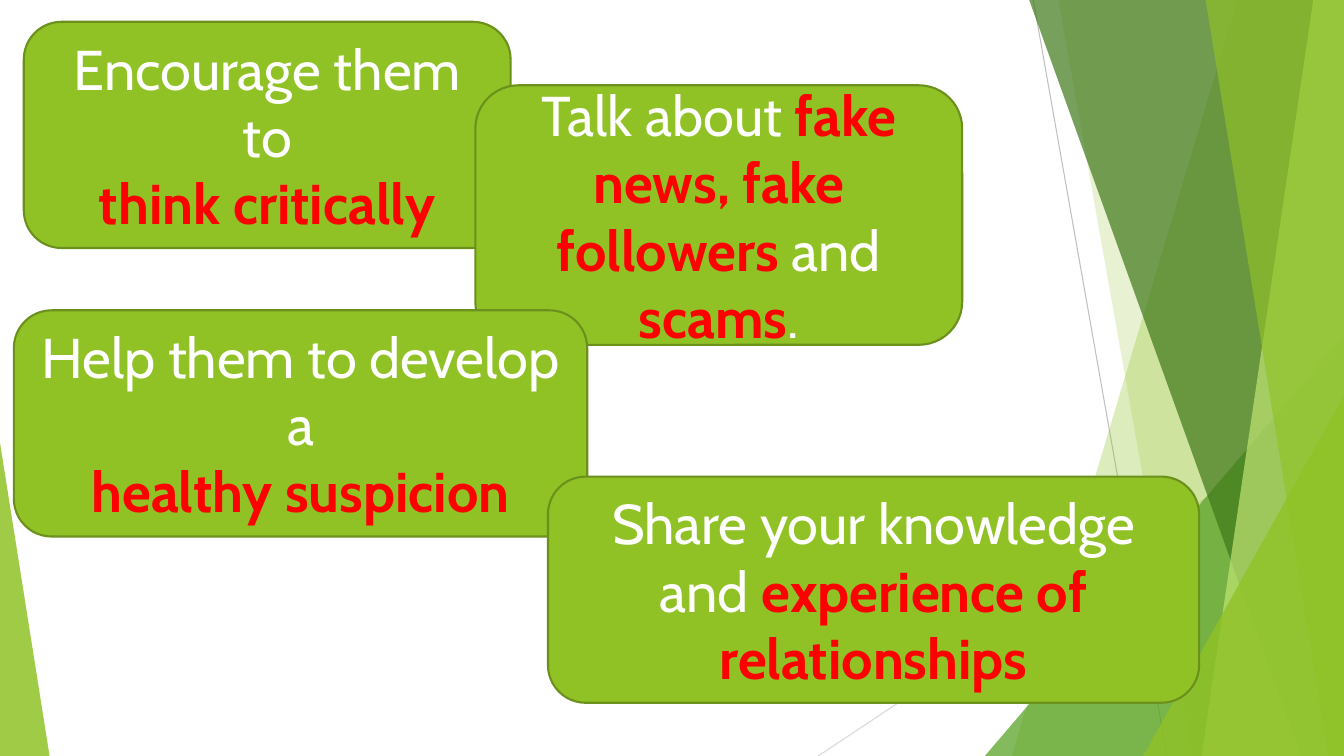
from dataclasses import dataclass

from lxml import etree
from pptx import Presentation
from pptx import util as u
from pptx.dml.color import RGBColor
from pptx.enum import shapes, text
from pptx.oxml.ns import qn

WIDTH, HEIGHT = 33.87, 19.05


@dataclass(frozen=True)
class Theme:
    green: str = "90C226"
    leaf: str = "54A021"
    forest: str = "3F7819"
    lime: str = "C0E474"
    outline: str = "6B901C"
    grey: str = "BFBFBF"
    pale_grey: str = "D9D9D9"
    white: str = "FFFFFF"
    accent: str = "FF0000"
    font: str = "Cabin"
    size: int = 40


class Deck:
    """Draws on one slide; all lengths are in centimetres."""

    def __init__(self, slide, theme):
        self.s = slide
        self.theme = theme

    def line(self, x1, y1, x2, y2, color):
        ends = [u.Cm(v) for v in (x1, y1, x2, y2)]
        cn = self.s.shapes.add_connector(shapes.MSO_CONNECTOR.STRAIGHT, *ends)
        cn.line.color.rgb = RGBColor.from_string(color)
        cn.line.width = u.Pt(0.75)
        etree.SubElement(cn._element.spPr, qn("a:effectLst"))

    def fill(self, sp, color, opacity=100):
        sp.shadow.inherit = False
        sp.fill.solid()
        sp.fill.fore_color.rgb = RGBColor.from_string(color)
        if opacity < 100:
            clr = sp._element.spPr.find(".//" + qn("a:srgbClr"))
            etree.SubElement(clr, qn("a:alpha"), val=str(opacity * 1000))
        sp.line.fill.background()

    def band(self, top_x, bottom_x, color, opacity):
        """Full-height strip from a slanted left edge to the slide's right edge."""
        top = u.Cm(-0.02)
        right, bottom = u.Cm(WIDTH), u.Cm(HEIGHT)
        outline = self.s.shapes.build_freeform(u.Cm(top_x), top)
        outline.add_line_segments(
            [(right, top), (right, bottom), (u.Cm(bottom_x), bottom)], close=True)
        self.fill(outline.convert_to_shape(), color, opacity)

    def corner(self, left, width, height, apex, color, opacity):
        """Triangle standing on the bottom edge of the slide."""
        sp = self.s.shapes.add_shape(
            shapes.MSO_SHAPE.ISOSCELES_TRIANGLE, u.Cm(left),
            u.Cm(HEIGHT - height), u.Cm(width), u.Cm(height))
        sp.adjustments[0] = apex
        self.fill(sp, color, opacity)

    def card(self, box, parts):
        """Rounded box; parts are (text, emphasised) pairs, None breaks the line."""
        t = self.theme
        sp = self.s.shapes.add_shape(
            shapes.MSO_SHAPE.ROUNDED_RECTANGLE, *[u.Cm(v) for v in box])
        self.fill(sp, t.green)
        sp.line.color.rgb = RGBColor.from_string(t.outline)
        sp.line.width = u.Pt(1.5)
        tf = sp.text_frame
        tf.word_wrap = True
        tf.vertical_anchor = text.MSO_ANCHOR.MIDDLE
        p = tf.paragraphs[0]
        p.alignment = text.PP_ALIGN.CENTER
        p.font.name = t.font
        p.font.size = u.Pt(t.size)
        for part in parts:
            if part is None:
                p.add_line_break()
                continue
            r = p.add_run()
            r.text, strong = part
            r.font.bold = strong
            r.font.color.rgb = RGBColor.from_string(t.accent if strong else t.white)


def main():
    prs = Presentation()
    prs.slide_width, prs.slide_height = u.Cm(WIDTH), u.Cm(HEIGHT)
    t = Theme()
    deck = Deck(prs.slides.add_slide(prs.slide_layouts[6]), t)

    # Background facets
    deck.line(26.04, 0, 29.41, HEIGHT, t.grey)
    deck.line(WIDTH, 10.24, 20.62, HEIGHT, t.pale_grey)
    deck.band(31.19, 25.5, t.green, 30)
    deck.band(26.67, 30.05, t.green, 20)
    deck.corner(24.82, 9.05, 10.59, 1, t.leaf, 72)
    deck.band(25.93, 32.79, t.forest, 70)
    deck.band(33.1, 30.28, t.lime, 70)
    deck.band(30.38, 33.48, t.green, 65)
    deck.corner(28.81, 5.06, 9.07, 1, t.green, 80)
    deck.corner(0, 1.25, 7.9, 0, t.green, 85)

    # Advice cards
    deck.card((0.6, 0.55, 12.27, 5.7), [
        ("Encourage them to", False), None, ("think critically", True)])
    deck.card((11.98, 2.15, 12.27, 6.54), [
        ("Talk about ", False), ("fake news, fake followers", True),
        (" and ", False), ("scams", True), (".", False)])
    deck.card((0.35, 7.82, 14.45, 5.7), [
        ("Help them to develop a", False), None, ("healthy suspicion", True)])
    deck.card((13.81, 12.01, 16.41, 5.7), [
        ("Share your knowledge and ", False),
        ("experience of relationships", True)])

    prs.save("out.pptx")


if __name__ == "__main__":
    main()
